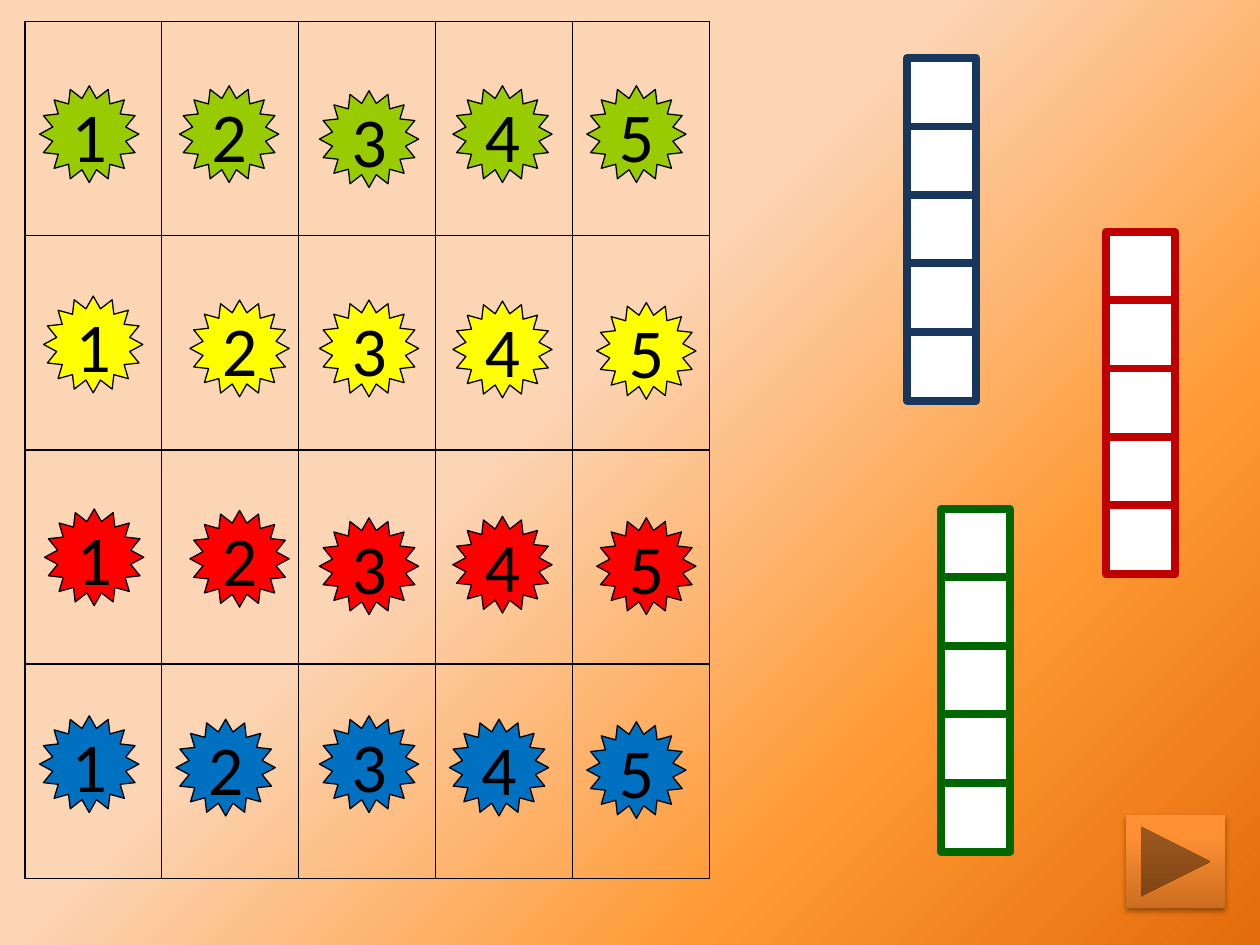
from dataclasses import dataclass

from lxml.etree import SubElement
from pptx import Presentation
from pptx.dml.color import RGBColor as RGB
from pptx.enum.shapes import MSO_SHAPE as Preset
from pptx.enum.text import MSO_ANCHOR as Anchor, PP_ALIGN as Align
from pptx.oxml.ns import qn
from pptx.util import Cm, Pt


@dataclass(frozen=True)
class Theme:
    font: str = "Calibri"
    number_size: int = 40
    ink: str = "000000"
    paper: str = "FFFFFF"
    green: str = "99CC00"
    yellow: str = "FFFF00"
    red: str = "FF0000"
    blue: str = "0070C0"
    strip_navy: str = "17375E"
    strip_red: str = "C00000"
    strip_green: str = "006600"
    background: tuple = ((43, "FCD5B5"), (74, "FF9933"), (100, "E46C0A"))
    button: tuple = ((0, "CC6E20"), (80, "FF9034"), (100, "FF9136"))
    grid_line: float = 1
    star_line: float = 0.75
    strip_line: float = 4.5


THEME = Theme()
ROWS, COLUMNS = 4, 5
STAR_WIDTH, STAR_HEIGHT = 2.0, 1.95
SQUARE, SQUARE_PITCH, SQUARE_COUNT = 1.39, 1.38, 5

# Each row of stars: colour and (x, y) offsets in cm inside the grid cells
STAR_ROWS = (
    (THEME.green, ((0.3, 1.3), (0.36, 1.3), (0.42, 1.4), (0.35, 1.3), (0.29, 1.3))),
    (THEME.yellow, ((0.38, 1.22), (0.57, 1.3), (0.42, 1.3), (0.35, 1.32), (0.49, 1.35))),
    (THEME.red, ((0.4, 1.19), (0.57, 1.22), (0.42, 1.37), (0.35, 1.34), (0.49, 1.37))),
    (THEME.blue, ((0.3, 1.04), (0.29, 1.11), (0.42, 1.04), (0.28, 1.11), (0.29, 1.16))),
)


def add_color(parent, color):
    return SubElement(parent, qn("a:srgbClr"), val=color)


def set_gradient(fill, holder, stops, angle):
    """Fill with any number of stops; the angle runs counter-clockwise."""
    fill.gradient()
    fill.gradient_angle = angle
    stop_list = holder.find(qn("a:gradFill")).find(qn("a:gsLst"))
    for stop in list(stop_list):
        stop_list.remove(stop)
    for percent, color in stops:
        add_color(SubElement(stop_list, qn("a:gs"), pos=str(percent * 1000)), color)


def add_outlined(slide, preset, left, top, width, height, fill, line, weight):
    shape = slide.shapes.add_shape(preset, Cm(left), Cm(top), Cm(width), Cm(height))
    shape.shadow.inherit = False
    shape.fill.solid()
    shape.fill.fore_color.rgb = RGB.from_string(fill)
    shape.line.color.rgb = RGB.from_string(line)
    shape.line.width = Pt(weight)
    return shape


def add_background(slide):
    fill = slide.background.fill
    fill.solid()
    holder = slide.element.find(".//" + qn("p:bgPr"))
    set_gradient(fill, holder, THEME.background, 315)


def format_cell(cell):
    cell.fill.background()
    properties = cell.fill._xPr
    for index, side in enumerate(("lnL", "lnR", "lnT", "lnB")):
        border = SubElement(properties, qn(f"a:{side}"), w=str(Pt(THEME.grid_line)))
        add_color(SubElement(border, qn("a:solidFill")), THEME.ink)
        properties.insert(index, border)


def add_star(slide, number, color, left, top):
    star = add_outlined(slide, Preset.STAR_16_POINT, left, top, STAR_WIDTH, STAR_HEIGHT,
                        color, THEME.ink, THEME.star_line)
    star.adjustments[0] = 0.375
    frame = star.text_frame
    frame.text = str(number)
    frame.word_wrap = False
    frame.vertical_anchor = Anchor.MIDDLE
    paragraph = frame.paragraphs[0]
    paragraph.alignment = Align.CENTER
    font = paragraph.runs[0].font
    font.name = THEME.font
    font.size = Pt(THEME.number_size)
    font.color.rgb = RGB.from_string(THEME.ink)


def add_star_grid(slide, left, top, width, height):
    column_width, row_height = width / COLUMNS, height / ROWS
    # Ruled grid without fill
    grid = slide.shapes.add_table(ROWS, COLUMNS, Cm(left), Cm(top), Cm(width), Cm(height)).table
    grid.first_row = grid.horz_banding = False
    for column in grid.columns:
        column.width = Cm(column_width)
    for row in grid.rows:
        row.height = Cm(row_height)
    for cell in grid.iter_cells():
        format_cell(cell)
    # Numbered stars
    for row, (color, offsets) in enumerate(STAR_ROWS):
        for column, (dx, dy) in enumerate(offsets):
            add_star(slide, column + 1, color,
                     left + column * column_width + dx, top + row * row_height + dy)


def add_strip(slide, left, top, color):
    for index in range(SQUARE_COUNT):
        add_outlined(slide, Preset.RECTANGLE, left, top + index * SQUARE_PITCH,
                     SQUARE, SQUARE, THEME.paper, color, THEME.strip_line)


def add_next_button(slide, left, top, width, height):
    button = slide.shapes.add_shape(Preset.ACTION_BUTTON_FORWARD_OR_NEXT,
                                    Cm(left), Cm(top), Cm(width), Cm(height))
    button.line.fill.background()
    properties = button.element.spPr
    set_gradient(button.fill, properties, THEME.button, 90)
    # Soft shadow straight below
    button.shadow.inherit = False
    shadow = SubElement(properties.find(qn("a:effectLst")), qn("a:outerShdw"),
                        blurRad=str(Pt(3.1)), dist=str(Pt(1.8)), dir="5400000", rotWithShape="0")
    SubElement(add_color(shadow, THEME.ink), qn("a:alpha"), val="35000")


def main():
    deck = Presentation()
    deck.slide_width, deck.slide_height = Cm(25.4), Cm(19.05)
    slide = deck.slides.add_slide(deck.slide_layouts[6])
    add_background(slide)
    add_star_grid(slide, 0.5, 0.43, 13.8, 17.28)
    add_strip(slide, 18.97, 10.26, THEME.strip_green)
    add_strip(slide, 18.29, 1.17, THEME.strip_navy)
    add_strip(slide, 22.3, 4.67, THEME.strip_red)
    add_next_button(slide, 22.7, 16.43, 2, 1.88)
    deck.save("out.pptx")


if __name__ == "__main__":
    main()
